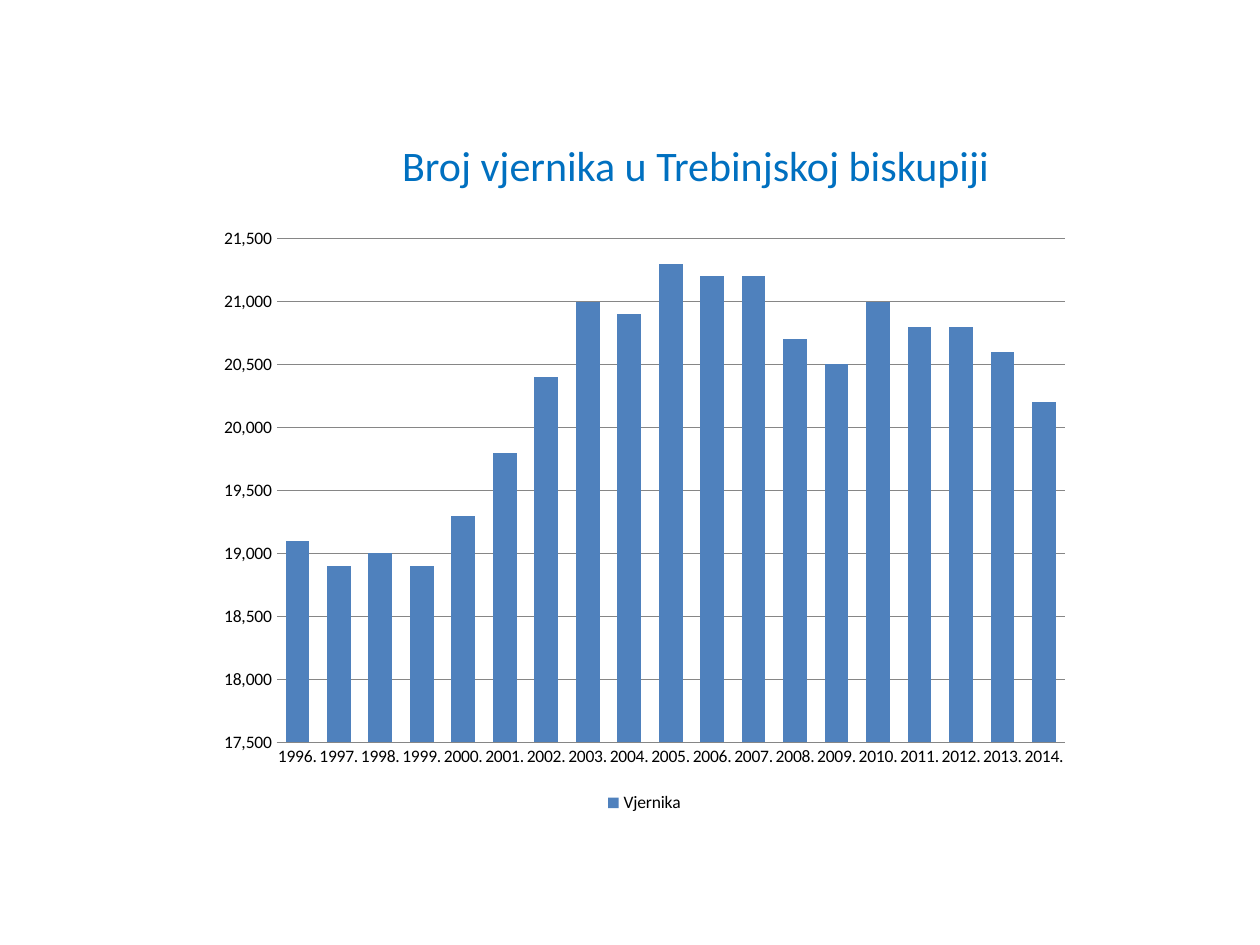
from pptx import Presentation
from pptx.chart.data import CategoryChartData
from pptx.dml.color import RGBColor
from pptx.enum.chart import XL_CHART_TYPE, XL_LEGEND_POSITION, XL_TICK_MARK
from pptx.enum.text import MSO_ANCHOR, PP_ALIGN
from pptx.util import Inches, Pt

COLUMN = XL_CHART_TYPE.COLUMN_CLUSTERED
BOTTOM = XL_LEGEND_POSITION.BOTTOM
NO_TICK = XL_TICK_MARK.NONE
MIDDLE = MSO_ANCHOR.MIDDLE
CENTER = PP_ALIGN.CENTER
FONT = "Calibri"
COLORS = {"title": "0070C0", "bar": "4F81BD", "text": "000000", "grid": "868686"}


def paint(font, size, color):
    font.name = FONT
    font.size = Pt(size)
    font.color.rgb = RGBColor.from_string(COLORS[color])


deck = Presentation()
deck.slide_width = Inches(10)
deck.slide_height = Inches(7.5)
slide = deck.slides.add_slide(deck.slide_layouts[6])

title = slide.shapes.add_textbox(Inches(1.26), Inches(0.68), Inches(8.52), Inches(1.25))
frame = title.text_frame
frame.word_wrap = True
frame.vertical_anchor = MIDDLE
frame.text = "Broj vjernika u Trebinjskoj biskupiji"
para = frame.paragraphs[0]
para.alignment = CENTER
paint(para.runs[0].font, 24, "title")

counts = [
    19100, 18900, 19000, 18900, 19300, 19800, 20400, 21000, 20900, 21300,
    21200, 21200, 20700, 20500, 21000, 20800, 20800, 20600, 20200,
]
data = CategoryChartData(number_format="#,##0")
data.categories = [f"{year}." for year in range(1996, 2015)]
data.add_series("Vjernika", counts)

chart = slide.shapes.add_chart(
    COLUMN, Inches(1.64), Inches(1.72), Inches(6.95), Inches(4.77), data
).chart
paint(chart.font, 10, "text")
chart.has_title = False
chart.has_legend = True
chart.legend.position = BOTTOM
chart.legend.include_in_layout = False

plot = chart.plots[0]
plot.gap_width = 75
plot.vary_by_categories = False
fill = plot.series[0].format.fill
fill.solid()
fill.fore_color.rgb = RGBColor.from_string(COLORS["bar"])

years = chart.category_axis
scale = chart.value_axis
for axis in (years, scale):
    axis.major_tick_mark = NO_TICK
    axis.minor_tick_mark = NO_TICK

scale.minimum_scale = 17500
scale.maximum_scale = 21500
scale.major_unit = 500
scale.has_major_gridlines = True
scale.tick_labels.number_format = "#,##0"
scale.tick_labels.number_format_is_linked = False
scale.format.line.fill.background()

for line in (years.format.line, scale.major_gridlines.format.line):
    line.width = Pt(0.75)
    line.color.rgb = RGBColor.from_string(COLORS["grid"])

deck.save("out.pptx")
